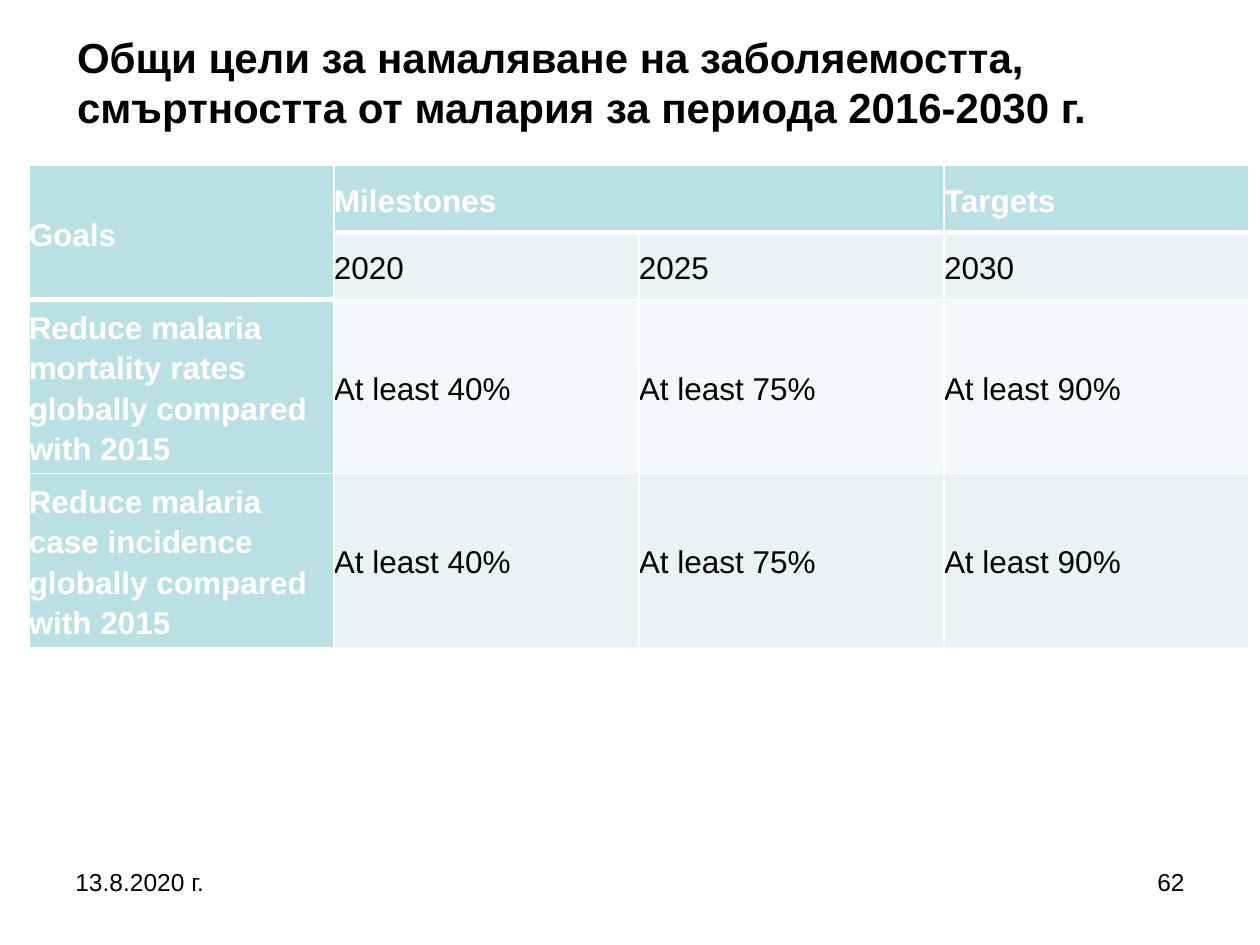
from lxml import etree
from pptx import Presentation
from pptx.dml.color import RGBColor
from pptx.enum.text import MSO_ANCHOR, MSO_AUTO_SIZE, PP_ALIGN
from pptx.oxml.ns import qn
from pptx.util import Cm, Pt

LEFT, RIGHT = PP_ALIGN.LEFT, PP_ALIGN.RIGHT
TOP, MIDDLE = MSO_ANCHOR.TOP, MSO_ANCHOR.MIDDLE
FIT_SHAPE = MSO_AUTO_SIZE.SHAPE_TO_FIT_TEXT

FONT = "Arial"
BLACK, WHITE = "000000", "FFFFFF"
HEADER_FILL = "BBE0E3"
BAND_FILLS = ("F3F9FA", "E7F3F4")
THIN, THICK = Pt(1), Pt(3)

GOALS = [
    ["Goals", "Milestones", "", "Targets"],
    ["", "2020", "2025", "2030"],
    ["Reduce malaria mortality rates globally compared with 2015",
     "At least 40%", "At least 75%", "At least 90%"],
    ["Reduce malaria case incidence globally compared with 2015",
     "At least 40%", "At least 75%", "At least 90%"],
]


def rgb(color):
    return RGBColor.from_string(color)


def set_borders(cell, widths, color):
    """Draw the left, right, top and bottom borders in the given widths."""
    tcPr = cell._tc.get_or_add_tcPr()
    for i, (side, width) in enumerate(zip("LRTB", widths)):
        ln = etree.Element(qn(f"a:ln{side}"), w=str(width))
        fill = etree.SubElement(ln, qn("a:solidFill"))
        etree.SubElement(fill, qn("a:srgbClr"), val=color)
        tcPr.insert(i, ln)


class SlideBuilder:
    def __init__(self, prs):
        self.s = prs.slides.add_slide(prs.slide_layouts[5])

    def set_text(self, tf, text, size, color=BLACK, bold=False, align=LEFT):
        tf.text = text
        p = tf.paragraphs[0]
        p.alignment = align
        for r in p.runs:
            r.font.name, r.font.size, r.font.bold = FONT, Pt(size), bold
            r.font.color.rgb = rgb(color)
        return p

    def title(self, text, left, top, width, height):
        sp = self.s.shapes.title
        sp.left, sp.top, sp.width, sp.height = map(Cm, (left, top, width, height))
        tf = sp.text_frame
        tf.word_wrap, tf.auto_size, tf.vertical_anchor = True, FIT_SHAPE, TOP
        self.set_text(tf, text, 24, bold=True)

    def text(self, text, left, top, width, height, align=LEFT):
        sp = self.s.shapes.add_textbox(*map(Cm, (left, top, width, height)))
        sp.text_frame.word_wrap = True
        self.set_text(sp.text_frame, text, 14, align=align)

    def table(self, rows, left, top, col_width, row_heights):
        n_cols = len(rows[0])
        size = (col_width * n_cols, sum(row_heights))
        table = self.s.shapes.add_table(
            len(rows), n_cols, *map(Cm, (left, top, *size))).table
        for column in table.columns:
            column.width = Cm(col_width)
        for row, height in zip(table.rows, row_heights):
            row.height = Cm(height)
        table.cell(0, 0).merge(table.cell(1, 0))
        table.cell(0, 1).merge(table.cell(0, 2))
        for i, row in enumerate(rows):
            for j, text in enumerate(row):
                self.cell(table.cell(i, j), text, i, j)

    def cell(self, cell, text, row, col):
        header = row == 0 or col == 0
        header_rows = 1 if col else 2
        cell.margin_left = cell.margin_right = 0
        cell.margin_top = cell.margin_bottom = 0
        cell.vertical_anchor = MIDDLE
        cell.fill.solid()
        cell.fill.fore_color.rgb = rgb(HEADER_FILL if header else BAND_FILLS[row % 2])
        above = THICK if row == header_rows else THIN
        below = THICK if row < header_rows else THIN
        set_borders(cell, (THIN, THIN, above, below), WHITE)
        if text:
            p = self.set_text(cell.text_frame, text, 18, WHITE if header else BLACK, header)
            p.line_spacing, p.space_after = 1.15, Pt(15)


def main():
    prs = Presentation()
    prs.slide_width, prs.slide_height = Cm(25.4), Cm(19.05)
    b = SlideBuilder(prs)
    b.title("Общи цели за намаляване на заболяемостта, "
            "смъртността от малария за периода 2016-2030 г.", 1.3, 0.5, 22.8, 2.3)
    b.table(GOALS, 0.58, 3.34, 6.15, (1.35, 1.35, 2.82, 2.82))
    b.text("13.8.2020 г.", 1.27, 17.35, 5.93, 1.32)
    b.text("62", 18.2, 17.35, 5.93, 1.32, RIGHT)
    prs.save("out.pptx")


if __name__ == "__main__":
    main()
